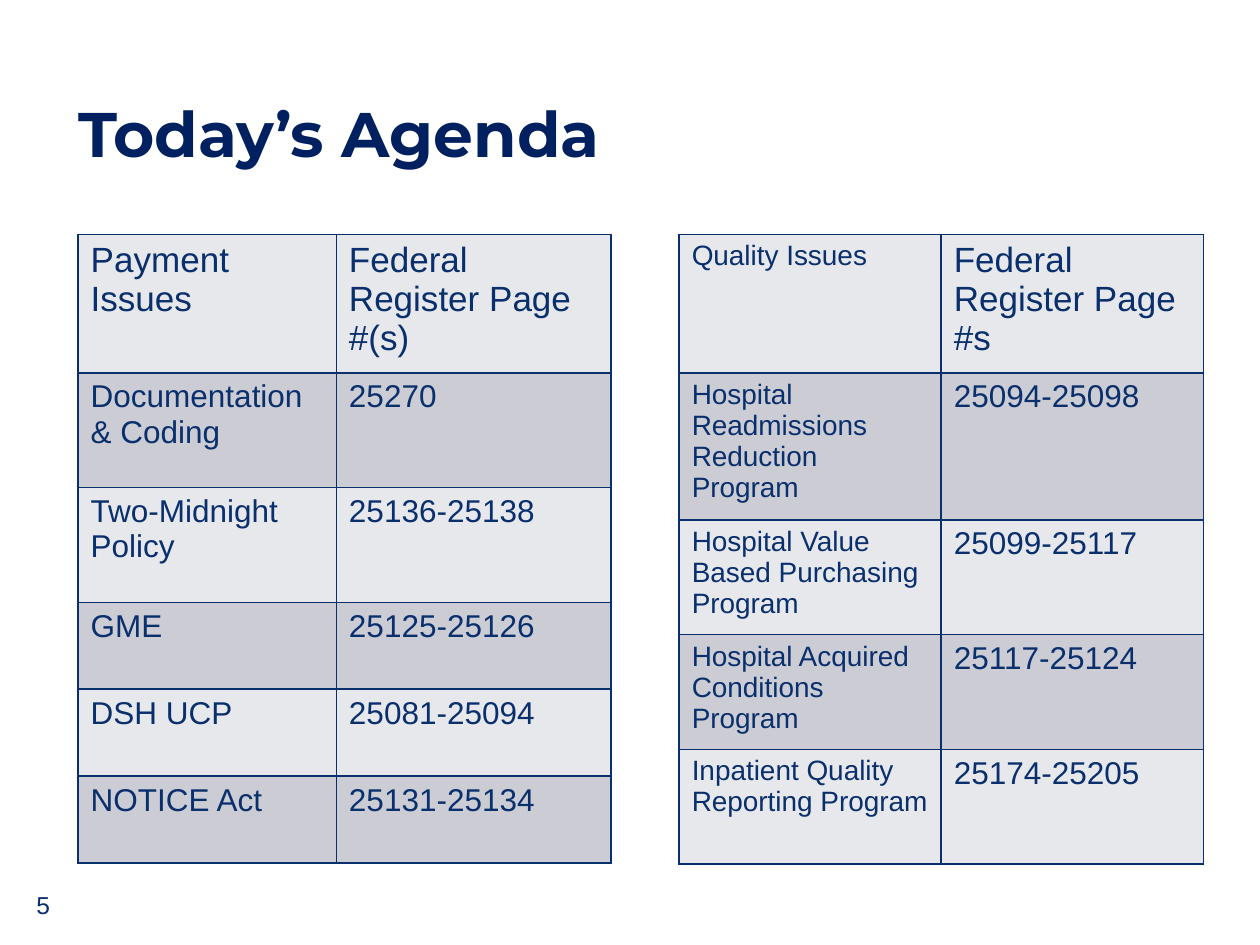
from lxml import etree
from pptx import Presentation
from pptx.dml.color import RGBColor
from pptx.enum.text import MSO_ANCHOR
from pptx.oxml.ns import qn
from pptx.util import Inches, Pt

BOTTOM = MSO_ANCHOR.BOTTOM
MIDDLE = MSO_ANCHOR.MIDDLE

COLORS = {
    "title": "002060",
    "ink": "092F6D",
    "light_row": "E7E8EB",
    "dark_row": "CCCDD4",
}
BLANK_LAYOUT = 6
LEFT_MARGIN = 0.62
TABLE_TOP = 1.86
TALL_ROW = 0.91
SHORT_ROW = 0.69

PAYMENT_ISSUES = [
    ("Payment Issues", "Federal Register Page #(s)"),
    ("Documentation & Coding", "25270"),
    ("Two-Midnight Policy", "25136-25138"),
    ("GME", "25125-25126"),
    ("DSH UCP", "25081-25094"),
    ("NOTICE Act", "25131-25134"),
]
QUALITY_ISSUES = [
    ("Quality Issues", "Federal Register Page #s"),
    ("Hospital Readmissions Reduction Program", "25094-25098"),
    ("Hospital Value Based Purchasing Program", "25099-25117"),
    ("Hospital Acquired Conditions Program", "25117-25124"),
    ("Inpatient Quality Reporting Program", "25174-25205"),
]


def write(frame, text, size=18, font="Arial", color="ink", bold=False, spacing=None):
    paragraph = frame.paragraphs[0]
    if spacing:
        paragraph.line_spacing = spacing
    run = paragraph.add_run()
    run.text = text
    run.font.size = Pt(size)
    run.font.name = font
    run.font.bold = bold
    run.font.color.rgb = RGBColor.from_string(COLORS[color])


def add_label(slide, text, left, top, width, height, anchor, inset=None, **style):
    frame = slide.shapes.add_textbox(
        Inches(left), Inches(top), Inches(width), Inches(height)
    ).text_frame
    frame.word_wrap = True
    frame.vertical_anchor = anchor
    if inset is not None:
        frame.margin_left = frame.margin_right = Inches(inset)
        frame.margin_top = frame.margin_bottom = Inches(inset)
    write(frame, text, **style)


def outline_cell(cell):
    properties = cell._tc.get_or_add_tcPr()
    for side in ("a:lnL", "a:lnR", "a:lnT", "a:lnB"):
        border = etree.SubElement(properties, qn(side), w=str(Pt(1)))
        fill = etree.SubElement(border, qn("a:solidFill"))
        etree.SubElement(fill, qn("a:srgbClr"), val=COLORS["ink"])


def add_issue_table(slide, issues, left, widths, heights, header_sizes, body_sizes):
    table = slide.shapes.add_table(
        len(issues), len(widths), Inches(left), Inches(TABLE_TOP),
        Inches(sum(widths)), Inches(sum(heights)),
    ).table
    for column, width in zip(table.columns, widths):
        column.width = Inches(width)
    for row_index, (issue, height) in enumerate(zip(issues, heights)):
        table.rows[row_index].height = Inches(height)
        sizes = body_sizes if row_index else header_sizes
        shade = COLORS["dark_row" if row_index % 2 else "light_row"]
        for column_index, (text, size) in enumerate(zip(issue, sizes)):
            cell = table.cell(row_index, column_index)
            outline_cell(cell)
            cell.fill.solid()
            cell.fill.fore_color.rgb = RGBColor.from_string(shade)
            write(cell.text_frame, text, size=size)


def main():
    deck = Presentation()
    deck.slide_width, deck.slide_height = Inches(10), Inches(7.5)
    slide = deck.slides.add_slide(deck.slide_layouts[BLANK_LAYOUT])

    add_label(slide, "Today’s Agenda", LEFT_MARGIN, 0.67, 9.17, 0.68, BOTTOM,
              inset=0, size=36, font="Montserrat", color="title", bold=True,
              spacing=0.85)
    add_issue_table(slide, PAYMENT_ISSUES, LEFT_MARGIN, [2.05, 2.18],
                    [TALL_ROW] * 3 + [SHORT_ROW] * 3, (20, 20), (18, 18))
    add_issue_table(slide, QUALITY_ISSUES, 5.39, [2.08, 2.08],
                    [0.95, 1.12] + [TALL_ROW] * 3, (16, 20), (16, 18))
    add_label(slide, "5", 0.19, 7.03, 2.25, 0.3, MIDDLE, size=14)

    deck.save("out.pptx")


if __name__ == "__main__":
    main()
